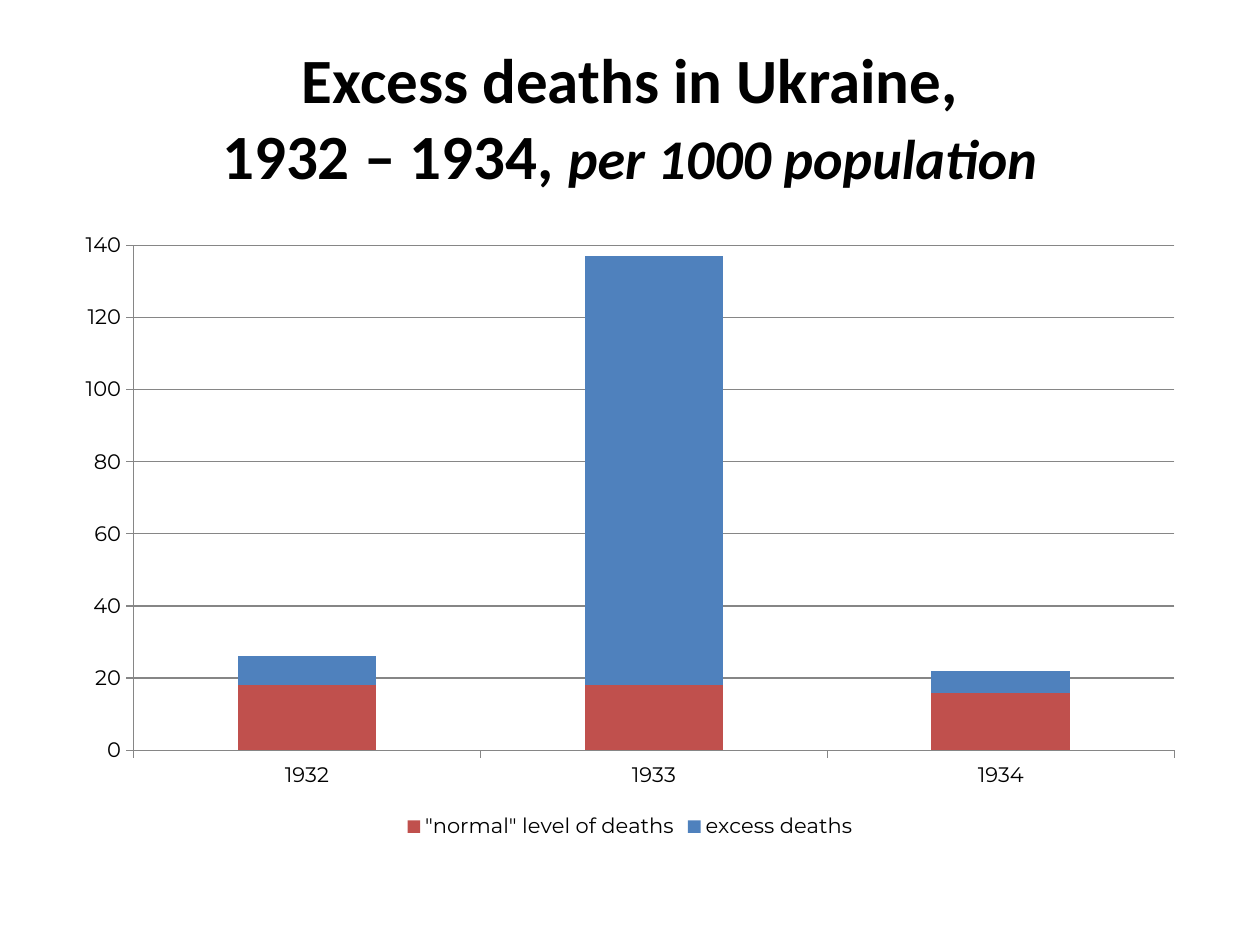
from dataclasses import dataclass

from pptx import Presentation
from pptx.chart.data import CategoryChartData
from pptx.dml.color import RGBColor
from pptx.enum.chart import XL_CHART_TYPE as ChartType
from pptx.enum.chart import XL_LEGEND_POSITION as LegendPosition
from pptx.enum.chart import XL_TICK_MARK as TickMark
from pptx.enum.text import MSO_ANCHOR as Anchor
from pptx.enum.text import PP_ALIGN as Align
from pptx.util import Inches, Pt


@dataclass(frozen=True)
class Theme:
    title_font: str = "Calibri"
    chart_font: str = "Montserrat"
    title_size: int = 36
    unit_size: int = 32
    chart_size: int = 12
    text: str = "000000"
    line: str = "868686"
    normal: str = "C0504D"
    excess: str = "4F81BD"


THEME = Theme()
YEARS = ["1932", "1933", "1934"]
DEATHS = [
    ('"normal" level of deaths', (18, 18, 16), THEME.normal),
    ("excess deaths", (8, 119, 6), THEME.excess),
]


def apply(target, values):
    for name, value in values.items():
        setattr(target, name, value)


def style_font(font, name, size, **values):
    apply(font, {"name": name, "size": Pt(size), **values})
    font.color.rgb = RGBColor.from_string(THEME.text)


def style_line(line):
    line.color.rgb = RGBColor.from_string(THEME.line)
    line.width = Pt(0.75)


def add_title(slide, left, top, width, height):
    title = slide.shapes.title
    apply(title, {"left": Inches(left), "top": Inches(top),
                  "width": Inches(width), "height": Inches(height)})
    apply(title.text_frame, {"word_wrap": True, "vertical_anchor": Anchor.MIDDLE})
    paragraph = title.text_frame.paragraphs[0]
    paragraph.alignment = Align.CENTER

    def add_run(text, size, italic=False):
        run = paragraph.add_run()
        run.text = text
        style_font(run.font, THEME.title_font, size, bold=True, italic=italic)

    add_run("Excess deaths in Ukraine,", THEME.title_size)
    paragraph.add_line_break()
    add_run("1932 – 1934, ", THEME.title_size)
    add_run("per 1000 population", THEME.unit_size, italic=True)


def style_axis(axis, **values):
    apply(axis, {"major_tick_mark": TickMark.OUTSIDE,
                 "minor_tick_mark": TickMark.NONE, **values})
    style_font(axis.tick_labels.font, THEME.chart_font, THEME.chart_size)
    style_line(axis.format.line)


def add_deaths_chart(slide, *box):
    data = CategoryChartData()
    data.categories = YEARS
    for name, values, _ in DEATHS:
        data.add_series(name, values)
    chart = slide.shapes.add_chart(
        ChartType.COLUMN_STACKED, *map(Inches, box), data).chart
    apply(chart, {"has_title": False, "has_legend": True})
    style_font(chart.font, THEME.chart_font, THEME.chart_size)

    # Stacked columns
    plot = chart.plots[0]
    apply(plot, {"gap_width": 150, "overlap": 100, "vary_by_categories": False})
    for series, (_, _, color) in zip(plot.series, DEATHS):
        series.format.fill.solid()
        series.format.fill.fore_color.rgb = RGBColor.from_string(color)

    # Axes and gridlines
    style_axis(chart.category_axis)
    style_axis(chart.value_axis, minimum_scale=0, maximum_scale=140,
               major_unit=20, has_major_gridlines=True)
    style_line(chart.value_axis.major_gridlines.format.line)

    # Legend
    apply(chart.legend, {"position": LegendPosition.BOTTOM,
                         "include_in_layout": False})
    style_font(chart.legend.font, THEME.chart_font, THEME.chart_size)


def main():
    presentation = Presentation()
    apply(presentation, {"slide_width": Inches(10), "slide_height": Inches(7.5)})
    title_only = presentation.slide_layouts[5]
    slide = presentation.slides.add_slide(title_only)
    add_title(slide, 0.5, 0.3, 9, 1.25)
    add_deaths_chart(slide, 0.5, 1.75, 9, 4.95)
    presentation.save("out.pptx")


if __name__ == "__main__":
    main()
